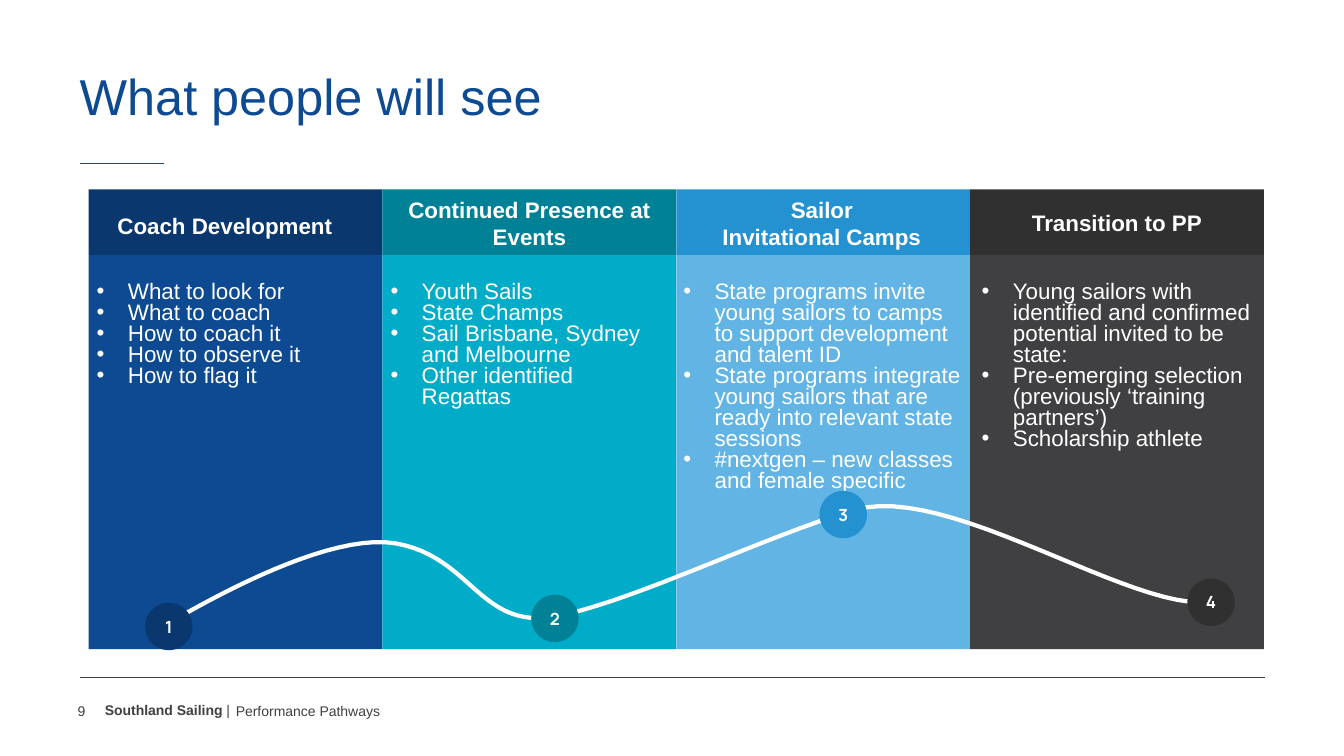
"""Builds the pathway slide: four columns of lists crossed by a numbered curve."""
import pptx
import pptx.util
import pptx.dml.color
import pptx.enum.shapes
import pptx.enum.text
import pptx.oxml.ns
import lxml.etree

WIDE = pptx.util.Inches(13.333)
HIGH = pptx.util.Inches(7.5)
ALIGN = pptx.enum.text.PP_ALIGN
ANCHOR = pptx.enum.text.MSO_ANCHOR
SHAPE = pptx.enum.shapes.MSO_SHAPE
LEFT, STEP = 6.6, 21.86
TOP, HEAD, BODY = 25.07, 8.67, 52.13
LINE = 2.78
EDGE = 5.93

HEX = {
    "white": "FFFFFF", "ink": "404042", "blue": "0D4A91",
    "navy": "0A376D", "teal": "008196", "aqua": "00ACC8",
    "azure": "2491D0", "sky": "61B4E4", "coal": "303031",
}

COLUMNS = [
    dict(head=["Coach Development"], dark="navy", light="blue",
         shift=-0.8, drop=0.3, span=17.7, pad=0.22, width=21.68, lines=5,
         items=["What to look for", "What to coach", "How to coach it",
                "How to observe it", "How to flag it"], dot=(12.56, 82.87)),
    dict(head=["Continued Presence at", "Events"], dark="teal", light="aqua",
         shift=0, drop=0, span=20.18, pad=0.22, width=21.08, lines=6,
         items=["Youth Sails", "State Champs",
                "Sail Brisbane, Sydney and Melbourne",
                "Other identified Regattas"], dot=(41.29, 81.8)),
    dict(head=["Sailor", "Invitational Camps"], dark="azure", light="sky",
         shift=-0.1, drop=0, span=16.95, pad=0.15, width=21.68, lines=10,
         items=["State programs invite young sailors to camps to support "
                "development and talent ID",
                "State programs integrate young sailors that are ready into "
                "relevant state sessions",
                "#nextgen – new classes and female specific"],
         dot=(62.74, 68.07)),
    dict(head=["Transition to PP"], dark="coal", light="ink",
         shift=0, drop=0, span=14.32, pad=0.49, width=20.92, lines=8,
         items=["Young sailors with identified and confirmed potential "
                "invited to be state:",
                "Pre-emerging selection (previously ‘training partners’)",
                "Scholarship athlete"], dot=(90.11, 79.67)),
]

CURVE = [(12.15, 82.8),
         (12.23, 82.93), (23.55, 70.13), (29.4, 71.87),
         (35.18, 73.6), (35.7, 83.6), (41.55, 81.47),
         (47.4, 79.33), (56.55, 71.2), (63.53, 67.47),
         (70.58, 63.73), (84.23, 81.07), (90.15, 79.6)]


def across(share):
    """Turn a percentage of the slide's width into a length."""
    return round(WIDE * share / 100)


def down(share):
    """Turn a percentage of the slide's height into a length."""
    return round(HIGH * share / 100)


def box(x, y, w, h):
    """Turn four percentages into left, top, width and height."""
    return across(x), down(y), across(w), down(h)


def tint(name):
    """Look up a named colour."""
    return pptx.dml.color.RGBColor.from_string(HEX[name])


def style(run, size, color, bold=False, face="Arial"):
    """Format one run."""
    font = run.font
    font.size, font.bold, font.name = pptx.util.Pt(size), bold, face
    font.color.rgb = tint(color)


def frame(shape, anchor, side=0, edge=0, wrap=True):
    """Set the margins, anchor and wrap of a shape's text."""
    text = shape.text_frame
    text.auto_size = pptx.enum.text.MSO_AUTO_SIZE.NONE
    text.word_wrap, text.vertical_anchor = wrap, anchor
    text.margin_left = text.margin_right = pptx.util.Inches(side)
    text.margin_top = text.margin_bottom = pptx.util.Inches(edge)
    return text


def label(slide, spot, lines, size, color, bold=False, align=ALIGN.LEFT):
    """Add a text box with one paragraph per line."""
    text = frame(slide.shapes.add_textbox(*spot), ANCHOR.MIDDLE, wrap=False)
    text.text = "\n".join(lines)
    for para in text.paragraphs:
        para.alignment = align
        style(para.runs[0], size, color, bold)
    return text


def block(slide, kind, spot, color):
    """Add a plain filled shape."""
    shape = slide.shapes.add_shape(kind, *spot)
    shape.shadow.inherit = False
    shape.fill.solid()
    shape.fill.fore_color.rgb = tint(color)
    shape.line.fill.background()
    return shape


def rule(slide, y, end, color, width):
    """Add a level line from the left edge."""
    line = slide.shapes.add_connector(
        pptx.enum.shapes.MSO_CONNECTOR.STRAIGHT,
        across(EDGE), down(y), across(end), down(y))
    line.line.color.rgb = tint(color)
    line.line.width = pptx.util.Pt(width)
    lxml.etree.SubElement(line.element.spPr, pptx.oxml.ns.qn("a:effectLst"))


def title(slide, words):
    """Place and format the title."""
    shape = slide.shapes.title
    shape.left, shape.top, shape.width, shape.height = box(
        EDGE, 0.93, 88.2, 15.73)
    text = frame(shape, ANCHOR.BOTTOM)
    text.text = words
    para = text.paragraphs[0]
    para.alignment, para.line_spacing = ALIGN.LEFT, 0.85
    style(para.runs[0], 36, "blue")


def bullet(para):
    """Give a paragraph a hanging round bullet."""
    props = para._p.get_or_add_pPr()
    indent = pptx.util.Inches(0.31)
    props.set("marL", str(indent))
    props.set("indent", str(-indent))
    for tag, key, value in (("a:buFont", "typeface", "Arial"),
                            ("a:buChar", "char", "•")):
        mark = lxml.etree.SubElement(props, pptx.oxml.ns.qn(tag))
        mark.set(key, value)


def fill(shape, spot, items):
    """Bring a body placeholder to the front and fill it with bullets."""
    shape.left, shape.top, shape.width, shape.height = spot
    shape.element.getparent().append(shape.element)
    text = frame(shape, ANCHOR.TOP, 0.05, 0.03)
    text.text = "\n".join(items)
    for para in text.paragraphs:
        bullet(para)
        para.alignment = ALIGN.LEFT
        para.line_spacing = pptx.util.Pt(15)
        para.space_before = pptx.util.Pt(0)
        style(para.runs[0], 16, "white")


def column(slide, rank, data, holder):
    """Draw one column with its heading and list."""
    x = LEFT + rank * STEP
    block(slide, SHAPE.RECTANGLE, box(x, TOP, STEP, HEAD), data["dark"])
    block(slide, SHAPE.RECTANGLE, box(x, TOP + HEAD, STEP, BODY),
          data["light"])
    mid = x + STEP / 2 + data["shift"]
    tall = 4.93 if len(data["head"]) == 1 else 8.53
    spot = box(mid - data["span"] / 2, 29.47 + data["drop"] - tall / 2,
               data["span"], tall)
    label(slide, spot, data["head"], 16, "white", True, ALIGN.CENTER)
    fill(holder, box(x + data["pad"], 37.07, data["width"],
                     data["lines"] * LINE + 0.8), data["items"])


def bend(knots, t):
    """Find the point at share t of a cubic curve."""
    mix = ((1 - t) ** 3, 3 * t * (1 - t) ** 2, 3 * t * t * (1 - t), t ** 3)
    x, y = (sum(m * k[axis] for m, k in zip(mix, knots)) for axis in (0, 1))
    return across(x), down(y)


def wave(slide, steps=24):
    """Draw the white curve through the columns."""
    points = [bend(CURVE[i:i + 4], n / steps)
              for i in range(0, len(CURVE) - 1, 3)
              for n in range(1, steps + 1)]
    pen = slide.shapes.build_freeform(*bend(CURVE[:4], 0))
    pen.add_line_segments(points, close=False)
    curve = pen.convert_to_shape()
    curve.shadow.inherit = False
    curve.fill.background()
    curve.line.color.rgb = tint("white")
    curve.line.width = pptx.util.Pt(3)


def badge(slide, number, data):
    """Add a numbered circle."""
    x, y = data["dot"]
    wide, tall = 3.53, 6.27
    shape = block(slide, SHAPE.OVAL,
                  box(x - wide / 2, y - tall / 2, wide, tall), data["dark"])
    text = frame(shape, ANCHOR.MIDDLE, wrap=False)
    text.text = str(number)
    text.paragraphs[0].alignment = ALIGN.CENTER
    style(text.paragraphs[0].runs[0], 12, "white", True, "Manrope")


def foot(slide):
    """Add the footer texts and both rules."""
    rule(slide, 89.6, 94.13, "ink", 0.25)
    rule(slide, 21.6, 12.23, "blue", 1)
    text = label(slide, box(7.8, 92.8, 12.6, 2.27), ["Southland Sailing"],
                 10, "ink", True)
    run = text.paragraphs[0].add_run()
    run.text = " |"
    style(run, 10, "ink")
    label(slide, box(17.55, 92.4, 64.95, 3.2), ["Performance Pathways"],
          10, "ink")
    label(slide, box(5.78, 92.4, 4.28, 3.2), ["9"], 10, "ink")


def main():
    """Build and save the slide."""
    deck = pptx.Presentation()
    deck.slide_width, deck.slide_height = WIDE, HIGH
    slide = deck.slides.add_slide(deck.slide_layouts[4])
    holders = list(slide.placeholders)[1:]
    title(slide, "What people will see")
    foot(slide)
    for rank, (data, holder) in enumerate(zip(COLUMNS, holders)):
        column(slide, rank, data, holder)
    wave(slide)
    for number, data in enumerate(COLUMNS, 1):
        badge(slide, number, data)
    deck.save("out.pptx")


if __name__ == "__main__":
    main()
